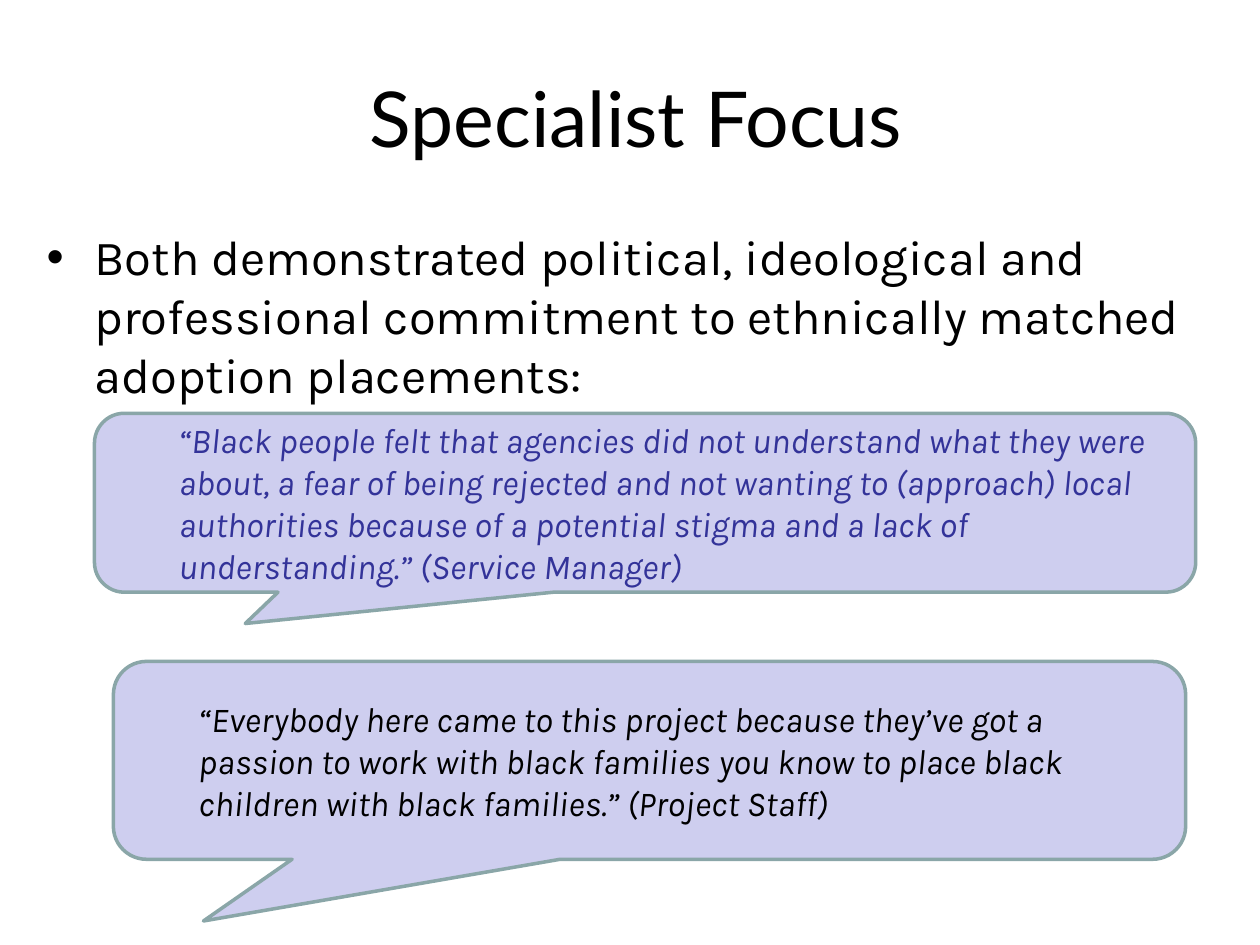
import pptx
import pptx.util
import pptx.dml.color
import pptx.enum.shapes
import pptx.enum.text
import pptx.oxml.ns
from lxml import etree

Inches, Pt = pptx.util.Inches, pptx.util.Pt
RGBColor = pptx.dml.color.RGBColor
ALIGN = pptx.enum.text.PP_ALIGN
ANCHOR = pptx.enum.text.MSO_ANCHOR

BLACK = RGBColor(0x00, 0x00, 0x00)
INDIGO = RGBColor(0x33, 0x33, 0x99)
LAVENDER = RGBColor(0xCE, 0xCE, 0xEF)
SAGE = RGBColor(0x8A, 0xA6, 0xA8)

HEADING = "Specialist Focus"
COMMITMENT = ("Both demonstrated political, ideological and professional "
              "commitment to ethnically matched adoption placements:")
QUOTES = [
    {"words": "“Black people felt that agencies did not understand what they were about, "
              "a fear of being rejected and not wanting to (approach) local authorities "
              "because of a potential stigma and a lack of understanding.” (Service Manager)",
     "area": (0.75, 3.28, 8.74, 1.42), "tail": (-0.363, 0.675), "color": INDIGO},
    {"words": "“Everybody here came to this project because they’ve got a passion to work "
              "with black families you know to place black children with black families.” "
              "(Project Staff)",
     "area": (0.9, 5.25, 8.51, 1.57), "tail": (-0.416, 0.812), "color": BLACK},
]
CORNER = 0.167


def place(part, area):
    part.left, part.top, part.width, part.height = map(Inches, area)


def write(part, text, size, font="Karla", color=BLACK, italic=False, align=ALIGN.LEFT,
          anchor=ANCHOR.MIDDLE, margin=0, indent=0, bullet=None, level=0):
    frame = part.text_frame
    frame.word_wrap = True
    frame.auto_size = pptx.enum.text.MSO_AUTO_SIZE.NONE
    frame.vertical_anchor = anchor
    paragraph = frame.paragraphs[0]
    paragraph.text = text
    paragraph.level = level
    paragraph.alignment = align
    paragraph.space_before = Pt(0)
    properties = paragraph._p.get_or_add_pPr()
    properties.set("marL", str(Inches(margin)))
    properties.set("indent", str(Inches(indent)))
    if bullet:
        mark = etree.SubElement(properties, pptx.oxml.ns.qn("a:buChar"))
        mark.set("char", bullet)
    style = paragraph.runs[0].font
    style.name, style.size, style.italic = font, Pt(size), italic
    style.color.rgb = color


def add_quote(slide, words, area, tail, color):
    callout = slide.shapes.add_shape(
        pptx.enum.shapes.MSO_SHAPE.ROUNDED_RECTANGULAR_CALLOUT, *map(Inches, area))
    for position, value in enumerate((*tail, CORNER)):
        callout.adjustments[position] = value
    callout.shadow.inherit = False
    callout.fill.solid()
    callout.fill.fore_color.rgb = LAVENDER
    callout.line.color.rgb = SAGE
    callout.line.width = Pt(2)
    write(callout, words, 20, color=color, italic=True, margin=0.5, level=1)


def main():
    deck = pptx.Presentation()
    deck.slide_width, deck.slide_height = Inches(10), Inches(7.5)
    slide = deck.slides.add_slide(deck.slide_layouts[1])
    heading, commitment = slide.placeholders
    place(heading, (0.29, 0.3, 9.52, 1.25))
    write(heading, HEADING, 44, font="Lato", align=ALIGN.CENTER)
    place(commitment, (0.27, 1.75, 9.53, 4.95))
    write(commitment, COMMITMENT, 28, anchor=ANCHOR.TOP,
          margin=0.38, indent=-0.38, bullet="•")
    for quote in QUOTES:
        add_quote(slide, **quote)
    deck.save("out.pptx")


if __name__ == "__main__":
    main()
